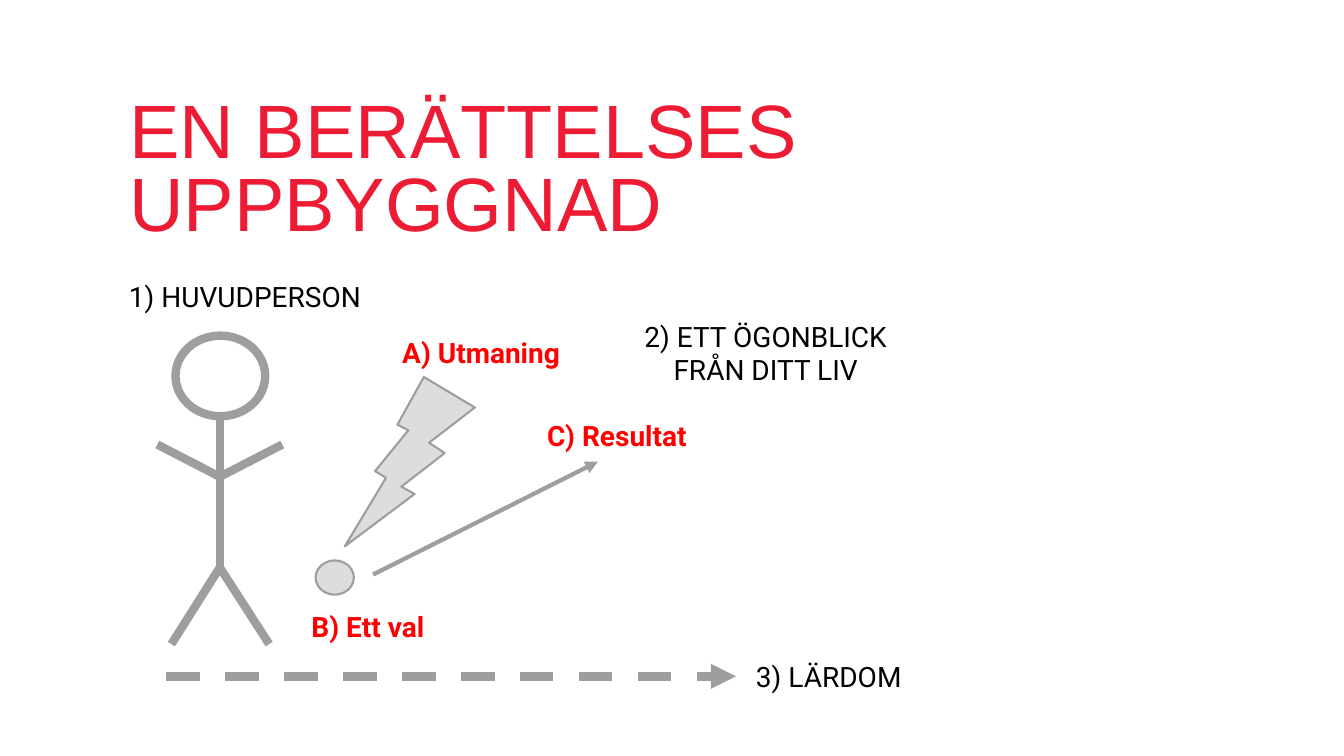
from pptx import Presentation
from pptx.dml.color import RGBColor
from pptx.enum.dml import MSO_LINE
from pptx.enum.shapes import MSO_CONNECTOR, MSO_SHAPE
from pptx.enum.text import MSO_ANCHOR, MSO_AUTO_SIZE, PP_ALIGN
from pptx.oxml.ns import qn
from pptx.util import Inches, Pt
from lxml import etree

COLOURS = {"title": "ED1B34", "step": "000000", "event": "FF0000",
           "line": "9C9E9F", "fill": "DDDDDD"}
TITLE = "EN BERÄTTELSES UPPBYGGNAD"
TITLE_BOX = (1.28, 0.52, 11.76, 1.92)
LABEL_HEIGHT = 0.34

# Labels: text, left, top, width
STEPS = [
    ("1) HUVUDPERSON", 1.03, 2.77, 2.8),
    ("2) ETT ÖGONBLICK FRÅN DITT LIV", 6.13, 3.33, 2.93),
    ("3) LÄRDOM", 7.14, 6.54, 2.16),
]
EVENTS = [
    ("B) Ett val", 2.57, 6.04, 2.16),
    ("C) Resultat", 5.04, 4.15, 2.16),
]
CHALLENGE = ("A) Utmaning", 3.39, 3.33, 2.53)
CHALLENGE_INDENT = 0.5

# Stick figure
HEAD = (1.74, 3.33, 0.89, 0.8)
NECK, SHOULDER, HIP = (2.18, 4.13), (2.18, 4.73), (2.18, 5.63)
LIMBS = [
    (NECK, HIP),
    (SHOULDER, (1.56, 4.41)),
    (SHOULDER, (2.8, 4.41)),
    (HIP, (1.7, 6.39)),
    (HIP, (2.67, 6.39)),
]

# Event symbols and arrows
BOLT = (3.42, 3.74, 1.29, 1.68)
CHOICE = (3.13, 5.56, 0.38, 0.34)
RESULT_ARROW = ((3.7, 5.7), (5.93, 4.58))
LESSON_ARROW = ((1.65, 6.71), (7.3, 6.71))


def colour(name):
    return RGBColor.from_string(COLOURS[name])


def inches(values):
    return [Inches(value) for value in values]


def set_all(target, values):
    for name, value in values.items():
        setattr(target, name, value)


def add_outlined(shapes, kind, box, weight, fill=None):
    shape = shapes.add_shape(kind, *inches(box))
    shape.shadow.inherit = False
    if fill:
        shape.fill.solid()
        shape.fill.fore_color.rgb = colour(fill)
    else:
        shape.fill.background()
    shape.line.color.rgb = colour("line")
    shape.line.width = Pt(weight)
    return shape


def add_stroke(shapes, start, end, weight, arrow=False, dash=None):
    stroke = shapes.add_connector(MSO_CONNECTOR.STRAIGHT, *inches(start + end))
    stroke.line.color.rgb = colour("line")
    stroke.line.width = Pt(weight)
    if dash:
        stroke.line.dash_style = dash
    properties = stroke._element.spPr
    if arrow:
        outline = properties.find(qn("a:ln"))
        etree.SubElement(outline, qn("a:tailEnd"), type="triangle")
    etree.SubElement(properties, qn("a:effectLst"))


def add_label(shapes, label, tint, bold=False, indent=None):
    """Add a one-paragraph label, centred unless an indent is given."""
    text, left, top, width = label
    box = shapes.add_textbox(*inches((left, top, width, LABEL_HEIGHT)))
    margin = Inches(0.1)
    set_all(box.text_frame, {
        "word_wrap": True, "auto_size": MSO_AUTO_SIZE.NONE,
        "vertical_anchor": MSO_ANCHOR.MIDDLE,
        "margin_left": margin, "margin_right": margin,
        "margin_top": margin, "margin_bottom": margin})
    para = box.text_frame.paragraphs[0]
    if indent:
        para._p.get_or_add_pPr().set("marL", str(Inches(indent)))
    else:
        para.alignment = PP_ALIGN.CENTER
    span = para.add_run()
    span.text = text
    set_all(span.font, {"name": "Roboto", "size": Pt(20), "bold": bold})
    span.font.color.rgb = colour(tint)


def add_title(page):
    title = page.shapes.title
    set_all(title, dict(zip(("left", "top", "width", "height"), inches(TITLE_BOX))))
    set_all(title.text_frame, {
        "word_wrap": True, "auto_size": MSO_AUTO_SIZE.NONE,
        "vertical_anchor": MSO_ANCHOR.BOTTOM,
        "margin_left": 0, "margin_right": 0, "margin_top": 0, "margin_bottom": 0})
    para = title.text_frame.paragraphs[0]
    set_all(para, {"alignment": PP_ALIGN.LEFT, "line_spacing": 0.8})
    span = para.add_run()
    span.text = TITLE
    set_all(span.font, {"name": "Arial", "size": Pt(54)})
    span.font.color.rgb = colour("title")


def add_main_character(page):
    figure = page.shapes.add_group_shape().shapes
    add_outlined(figure, MSO_SHAPE.OVAL, HEAD, 6)
    for start, end in LIMBS:
        add_stroke(figure, start, end, 6)


def add_moment(page):
    """Add the challenge, choice and result with their labels."""
    moment = page.shapes.add_group_shape().shapes
    bolt = add_outlined(moment, MSO_SHAPE.LIGHTNING_BOLT, BOLT, 1.5, "fill")
    bolt._element.spPr.find(qn("a:xfrm")).set("flipH", "1")
    add_stroke(moment, *RESULT_ARROW, 3, arrow=True)
    add_outlined(moment, MSO_SHAPE.FLOWCHART_CONNECTOR, CHOICE, 1.5, "fill")
    for label in EVENTS:
        add_label(moment, label, "event", bold=True)
    add_label(moment, CHALLENGE, "event", bold=True, indent=CHALLENGE_INDENT)


def main():
    deck = Presentation()
    deck.slide_width, deck.slide_height = inches((13.33, 7.5))
    page = deck.slides.add_slide(deck.slide_layouts[5])
    add_title(page)
    add_main_character(page)
    add_stroke(page.shapes, *LESSON_ARROW, 6, arrow=True, dash=MSO_LINE.DASH)
    add_moment(page)
    for label in STEPS:
        add_label(page.shapes, label, "step")
    deck.save("out.pptx")


if __name__ == "__main__":
    main()
